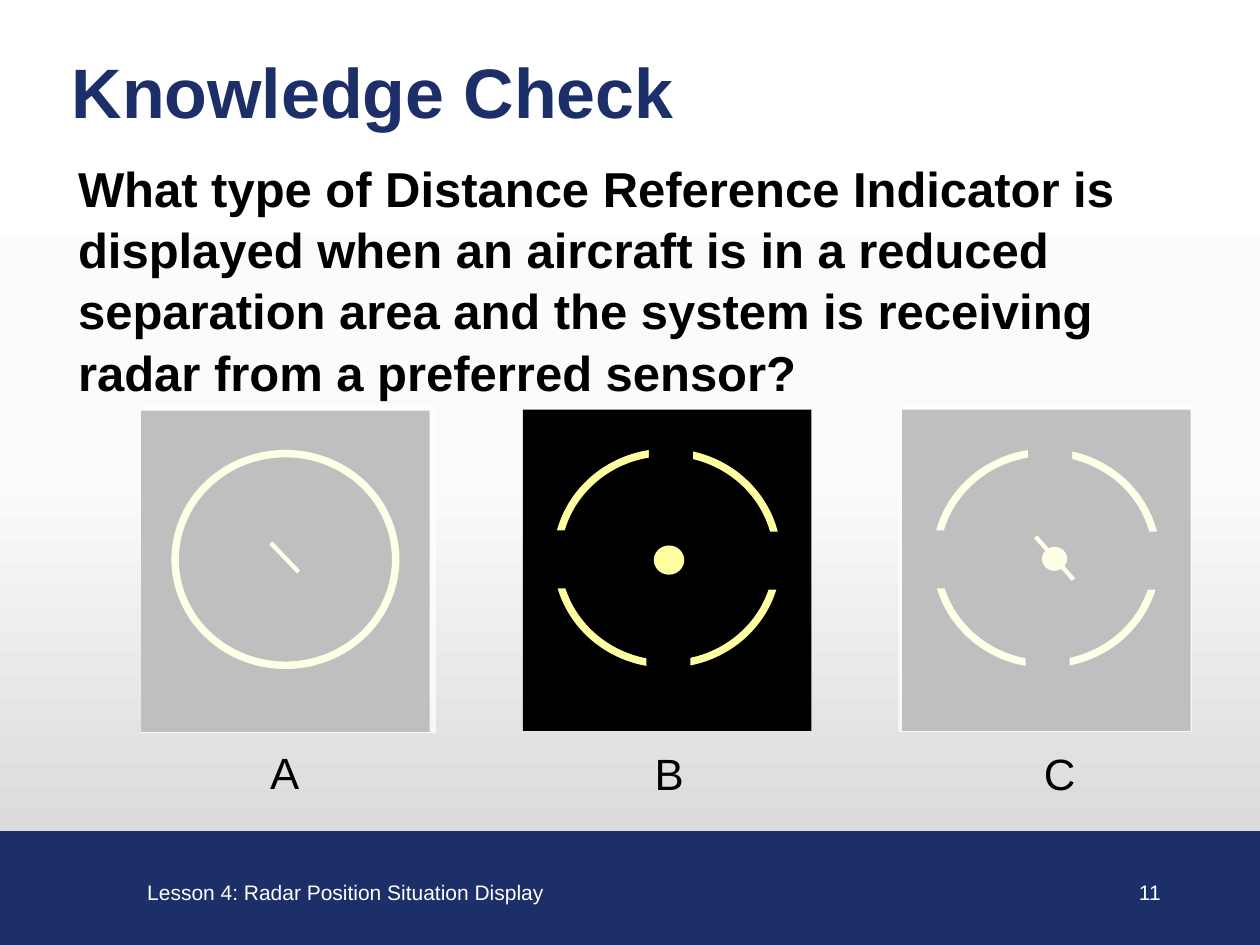
import copy
from dataclasses import dataclass
from typing import Optional, Tuple

import lxml.etree
import pptx
import pptx.dml.color
import pptx.enum.shapes
import pptx.enum.text
import pptx.oxml.ns
import pptx.util

Inches = pptx.util.Inches
Pt = pptx.util.Pt
ShapeType = pptx.enum.shapes.MSO_SHAPE
Align = pptx.enum.text.PP_ALIGN
Anchor = pptx.enum.text.MSO_ANCHOR
qn = pptx.oxml.ns.qn
Box = Tuple[float, float, float, float]
Point = Tuple[float, float]


@dataclass(frozen=True)
class Theme:
    font: str = "Arial"
    navy: str = "1D2F68"
    white: str = "FFFFFF"
    black: str = "000000"
    yellow: str = "FFFFA1"
    background: Tuple[str, ...] = ("FFFFFF", "FBFBFB", "D0D0D0")
    title: float = 40
    question: float = 28
    label: float = 25
    footer: float = 12


THEME = Theme()


@dataclass(frozen=True)
class Indicator:
    """One answer; places inside it are measured from its panel corner."""
    label: str
    label_at: Point
    corner: Point
    broken: bool = False
    ring_fill: Optional[str] = None
    hand: Optional[Tuple[Point, Point]] = None
    dot: Optional[Point] = None
    dot_line: float = 0
    veil: Optional[Box] = None


PANEL_SIZE = (2.29, 2.55)
RING = (0.27, 0.34, 1.75, 1.68)
GAPS = ((1.87, 0.97, 0.26, 0.46), (0.19, 0.96, 0.26, 0.46),
        (1.0, 0.18, 0.35, 0.46), (0.98, 1.77, 0.35, 0.46))
DOT_SIZE = (0.2, 0.19)

INDICATORS = (
    Indicator("A", (1.89, 5.87), (1.12, 3.26), ring_fill=THEME.black,
              hand=((1.03, 1.05), (1.25, 1.28)), veil=(1.12, 3.21, 2.34, 2.61)),
    Indicator("B", (4.94, 5.88), (4.15, 3.25), broken=True,
              dot=(1.06, 1.1), dot_line=3),
    Indicator("C", (8.04, 5.88), (7.16, 3.25), broken=True, ring_fill=THEME.black,
              hand=((1.06, 1.01), (1.36, 1.35)), dot=(1.11, 1.09),
              veil=(7.13, 3.2, 2.33, 2.61)),
)


def rgb(color: str) -> pptx.dml.color.RGBColor:
    return pptx.dml.color.RGBColor.from_string(color)


def add_text(slide, text: str, box: Box, *, size: float, color: str,
             bold: bool = False, align=Align.LEFT, anchor=Anchor.TOP,
             indent: float = 0, top_inset: float = 0.05, spacing: float = 1.0) -> None:
    shape = slide.shapes.add_textbox(*map(Inches, box))
    frame = shape.text_frame
    frame.word_wrap = True
    frame.vertical_anchor = anchor
    frame.margin_left = Inches(0.1 + indent)
    frame.margin_top = Inches(top_inset)
    paragraph = frame.paragraphs[0]
    paragraph.text = text
    paragraph.alignment = align
    paragraph.line_spacing = spacing
    font = paragraph.runs[0].font
    font.name = THEME.font
    font.size = Pt(size)
    font.bold = bold
    font.color.rgb = rgb(color)


def add_shape(slide, kind, box: Box, *, fill: Optional[str] = None,
              line: Optional[str] = None, width: float = 0,
              opacity: Optional[int] = None) -> None:
    shape = slide.shapes.add_shape(kind, *map(Inches, box))
    shape.shadow.inherit = False
    if fill:
        shape.fill.solid()
        shape.fill.fore_color.rgb = rgb(fill)
    else:
        shape.fill.background()
    if line and width:
        shape.line.color.rgb = rgb(line)
        shape.line.width = Pt(width)
    else:
        shape.line.fill.background()
    if opacity is not None:
        color = shape.fill._xPr.find(".//" + qn("a:srgbClr"))
        lxml.etree.SubElement(color, qn("a:alpha"), val=str(opacity * 1000))


def add_line(slide, start: Point, end: Point, color: str, width: float) -> None:
    connector = slide.shapes.add_connector(
        pptx.enum.shapes.MSO_CONNECTOR.STRAIGHT, *map(Inches, start + end))
    connector.line.color.rgb = rgb(color)
    connector.line.width = Pt(width)
    lxml.etree.SubElement(connector._element.spPr, qn("a:effectLst"))


def paint_background(slide) -> None:
    fill = slide.background.fill
    fill.gradient()
    fill.gradient_angle = 270
    first = slide._element.find(".//" + qn("a:gs"))
    first.addnext(copy.deepcopy(first))
    for index, (stop, color) in enumerate(zip(fill.gradient_stops, THEME.background)):
        stop.position = index / 2
        stop.color.rgb = rgb(color)


def draw_indicator(slide, indicator: Indicator) -> None:
    left, top = indicator.corner

    def place(point: Point) -> Point:
        return (left + point[0], top + point[1])

    add_shape(slide, ShapeType.RECTANGLE, indicator.corner + PANEL_SIZE, fill=THEME.black)
    add_shape(slide, ShapeType.OVAL, place(RING[:2]) + RING[2:],
              fill=indicator.ring_fill, line=THEME.yellow, width=4.25)
    if indicator.broken:
        for gap in GAPS:
            add_shape(slide, ShapeType.RECTANGLE, place(gap[:2]) + gap[2:],
                      fill=THEME.black)
    if indicator.hand:
        start, end = indicator.hand
        add_line(slide, place(start), place(end), THEME.yellow, 2.5)
    if indicator.dot:
        add_shape(slide, ShapeType.OVAL, place(indicator.dot) + DOT_SIZE,
                  fill=THEME.yellow, line=THEME.yellow, width=indicator.dot_line)
    add_text(slide, indicator.label, indicator.label_at + (0.74, 0.52),
             size=THEME.label, color=THEME.black, align=Align.CENTER)
    # Translucent veil over the wrong answers
    if indicator.veil:
        add_shape(slide, ShapeType.RECTANGLE, indicator.veil,
                  fill=THEME.white, opacity=75)


def main() -> None:
    presentation = pptx.Presentation()
    presentation.slide_width = Inches(10)
    presentation.slide_height = Inches(7.5)
    slide = presentation.slides.add_slide(presentation.slide_layouts[6])
    paint_background(slide)

    # Footer
    add_shape(slide, ShapeType.RECTANGLE, (-0.02, 6.6, 10.02, 0.9),
              fill=THEME.navy, line=THEME.navy, width=0.75)
    add_text(slide, "Lesson 4: Radar Position Situation Display",
             (1.07, 6.93, 4.32, 0.3), size=THEME.footer, color=THEME.white)
    add_text(slide, "11", (8.69, 6.93, 0.62, 0.3), size=THEME.footer,
             color=THEME.white, align=Align.RIGHT, anchor=Anchor.MIDDLE)

    # Title and question
    add_text(slide, "Knowledge Check", (0.47, 0.38, 9.27, 0.67), size=THEME.title,
             color=THEME.navy, bold=True, anchor=Anchor.MIDDLE)
    add_text(slide, "What type of Distance Reference Indicator is displayed when an "
             "aircraft is in a reduced separation area and the system is receiving "
             "radar from a preferred sensor?", (0.47, 1.16, 9.27, 5.21),
             size=THEME.question, color=THEME.black, bold=True,
             indent=0.05, top_inset=0.08, spacing=1.04)

    # Answers
    for indicator in INDICATORS:
        draw_indicator(slide, indicator)

    presentation.save("out.pptx")


if __name__ == "__main__":
    main()
